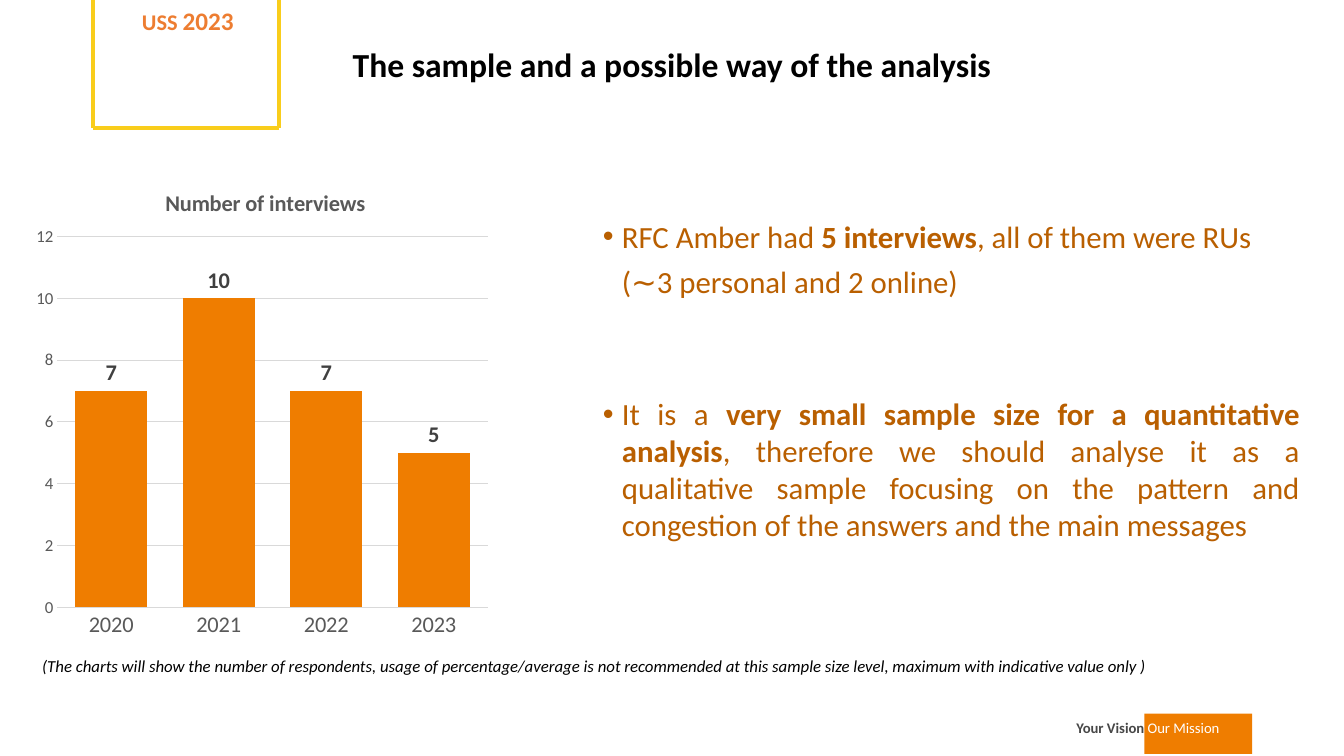
"""Build the slide on the interview sample and how to analyse it."""
from dataclasses import dataclass

from lxml import etree
from pptx import Presentation
from pptx.chart.data import CategoryChartData
from pptx.dml.color import RGBColor
from pptx.enum import chart as ch, shapes, text
from pptx.oxml.ns import qn
from pptx.util import Inches, Pt


@dataclass(frozen=True)
class Theme:
    font: str = "Calibri"
    orange: str = "EF7D00"
    brown: str = "B95F00"
    label: str = "ED7D31"
    yellow: str = "F9CD1B"
    black: str = "000000"
    white: str = "FFFFFF"
    slate: str = "474747"
    dark: str = "404040"
    grey: str = "595959"
    grid: str = "D9D9D9"
    title: float = 24
    body: float = 22
    year: float = 18
    heading: float = 16
    small: float = 12
    footer: float = 10.5


T = Theme()
LEFT, CENTER, JUSTIFY = (text.PP_ALIGN.LEFT, text.PP_ALIGN.CENTER,
                         text.PP_ALIGN.JUSTIFY)


def style(font, size, color, bold=False, italic=False):
    font.name, font.size = T.font, Pt(size)
    font.bold, font.italic = bold, italic
    font.color.rgb = RGBColor.from_string(color)


def add_run(p, words, size, color, bold=False, italic=False):
    r = p.add_run()
    r.text = words
    style(r.font, size, color, bold, italic)


def add_text(s, box, runs, align=LEFT, wrap=True):
    tf = s.shapes.add_textbox(*map(Inches, box)).text_frame
    tf.word_wrap = wrap
    p = tf.paragraphs[0]
    p.alignment = align
    for run in runs:
        add_run(p, *run)
    return tf


def add_line(s, start, end):
    line = s.shapes.add_connector(shapes.MSO_CONNECTOR.STRAIGHT,
                                  *map(Inches, start + end))
    line.line.color.rgb = RGBColor.from_string(T.yellow)
    line.line.width = Pt(3)
    etree.SubElement(line._element.spPr, qn("a:effectLst"))


def add_block(s, box, color):
    sp = s.shapes.add_shape(shapes.MSO_SHAPE.RECTANGLE, *map(Inches, box))
    sp.shadow.inherit = False
    sp.fill.solid()
    sp.fill.fore_color.rgb = RGBColor.from_string(color)
    sp.line.fill.background()


def add_body(s, box, paragraphs):
    tf = s.shapes.add_textbox(*map(Inches, box)).text_frame
    tf.word_wrap = True
    for i, (bullet, before, after, parts) in enumerate(paragraphs):
        p = tf.add_paragraph() if i else tf.paragraphs[0]
        p.alignment = JUSTIFY
        p.space_before, p.space_after = Pt(before), Pt(after)
        pPr = p._p.get_or_add_pPr()
        pPr.set("marL", str(Inches(0.19)))
        pPr.set("indent", str(Inches(-0.19 if bullet else 0)))
        if bullet:
            etree.SubElement(pPr, qn("a:buFont")).set("typeface", "Arial")
            etree.SubElement(pPr, qn("a:buChar")).set("char", "•")
        for words, bold in parts:
            add_run(p, words, T.body, T.brown, bold)


def place(parent, index, **fractions):
    """Give a chart part a fixed place, in fractions of the chart."""
    for old in parent.findall(qn("c:layout")):
        parent.remove(old)
    layout = etree.Element(qn("c:layout"))
    manual = etree.SubElement(layout, qn("c:manualLayout"))
    if "w" in fractions:
        etree.SubElement(manual, qn("c:layoutTarget")).set("val", "inner")
    for side in "xy":
        etree.SubElement(manual, qn(f"c:{side}Mode")).set("val", "edge")
    for key, value in fractions.items():
        etree.SubElement(manual, qn(f"c:{key}")).set("val", str(value))
    parent.insert(index, layout)


def add_columns(s, box, heading, counts):
    data = CategoryChartData()
    data.categories = list(counts)
    data.add_series("Series 1", list(counts.values()))
    chart = s.shapes.add_chart(ch.XL_CHART_TYPE.COLUMN_CLUSTERED,
                               *map(Inches, box), data).chart
    style(chart.font, T.small, T.grey)
    chart.has_legend = False
    chart.has_title = True
    add_run(chart.chart_title.text_frame.paragraphs[0], heading,
            T.heading, T.grey, True)
    place(chart.chart_title._element, 1, x=0.29, y=0.04)
    place(chart._chartSpace.chart.plotArea, 0, x=0.07, y=0.15, w=0.91, h=0.77)

    grid = RGBColor.from_string(T.grid)
    years, values = chart.category_axis, chart.value_axis
    for axis, size in ((years, T.heading), (values, T.small)):
        axis.major_tick_mark = axis.minor_tick_mark = ch.XL_TICK_MARK.NONE
        style(axis.tick_labels.font, size, T.grey)
    years.format.line.color.rgb = grid
    years.format.line.width = Pt(0.75)
    values.format.line.fill.background()
    values.minimum_scale, values.maximum_scale, values.major_unit = 0, 12, 2
    values.major_gridlines.format.line.color.rgb = grid
    values.major_gridlines.format.line.width = Pt(0.75)

    plot = chart.plots[0]
    plot.gap_width, plot.vary_by_categories = 50, False
    fill = plot.series[0].format.fill
    fill.solid()
    fill.fore_color.rgb = RGBColor.from_string(T.orange)
    plot.has_data_labels = True
    labels = plot.data_labels
    labels.show_value = True
    labels.position = ch.XL_LABEL_POSITION.OUTSIDE_END
    style(labels.font, T.heading, T.dark, True)


def main():
    prs = Presentation()
    prs.slide_width, prs.slide_height = Inches(13.33), Inches(7.5)
    s = prs.slides.add_slide(prs.slide_layouts[6])

    add_block(s, (11.35, 7.08, 1.07, 0.4), T.orange)
    add_text(s, (10.54, 7.08, 1.69, 0.28),
             [("Your Vision ", T.footer, T.slate, True),
              ("Our Mission", T.footer, T.white)], CENTER, False)

    corners = [(0.92, 0), (0.92, 1.27), (2.77, 1.27), (2.77, 0)]
    for start, end in zip(corners, corners[1:]):
        add_line(s, start, end)
    add_text(s, (1.31, 0, 1.13, 0.4),
             [("USS ", T.heading, T.label, True),
              ("2023", T.year, T.label, True)], wrap=False)

    title = add_text(s, (0, 0.4, 13.33, 0.52),
                     [("The sample and a possible way of the analysis",
                       T.title, T.black, True)], CENTER)
    title.vertical_anchor = text.MSO_ANCHOR.MIDDLE
    title.paragraphs[0].line_spacing = 0.9

    add_body(s, (5.88, 2.11, 7.11, 4.3), [
        (True, 0, 6, [("RFC Amber had ", False), ("5 interviews", True),
                      (", all of them were RUs", False)]),
        (False, 0, 6, [("(∼3 personal and 2 online)", False)]),
        (True, 62, 12, [
            ("It is a ", False),
            ("very small sample size for a quantitative analysis", True),
            (", therefore we should analyse it as a qualitative sample "
             "focusing on the pattern and congestion of the answers and "
             "the main messages", False)]),
    ])
    add_columns(s, (0.24, 1.63, 4.69, 4.78), "Number of interviews",
                {"2020": 7, "2021": 10, "2022": 7, "2023": 5})
    add_text(s, (0.32, 6.46, 12.17, 0.3),
             [("(The charts will show the number of respondents, usage of "
               "percentage/average is not recommended at this sample size "
               "level, maximum with indicative value only )",
               T.small, T.black, False, True)])
    prs.save("out.pptx")


if __name__ == "__main__":
    main()
